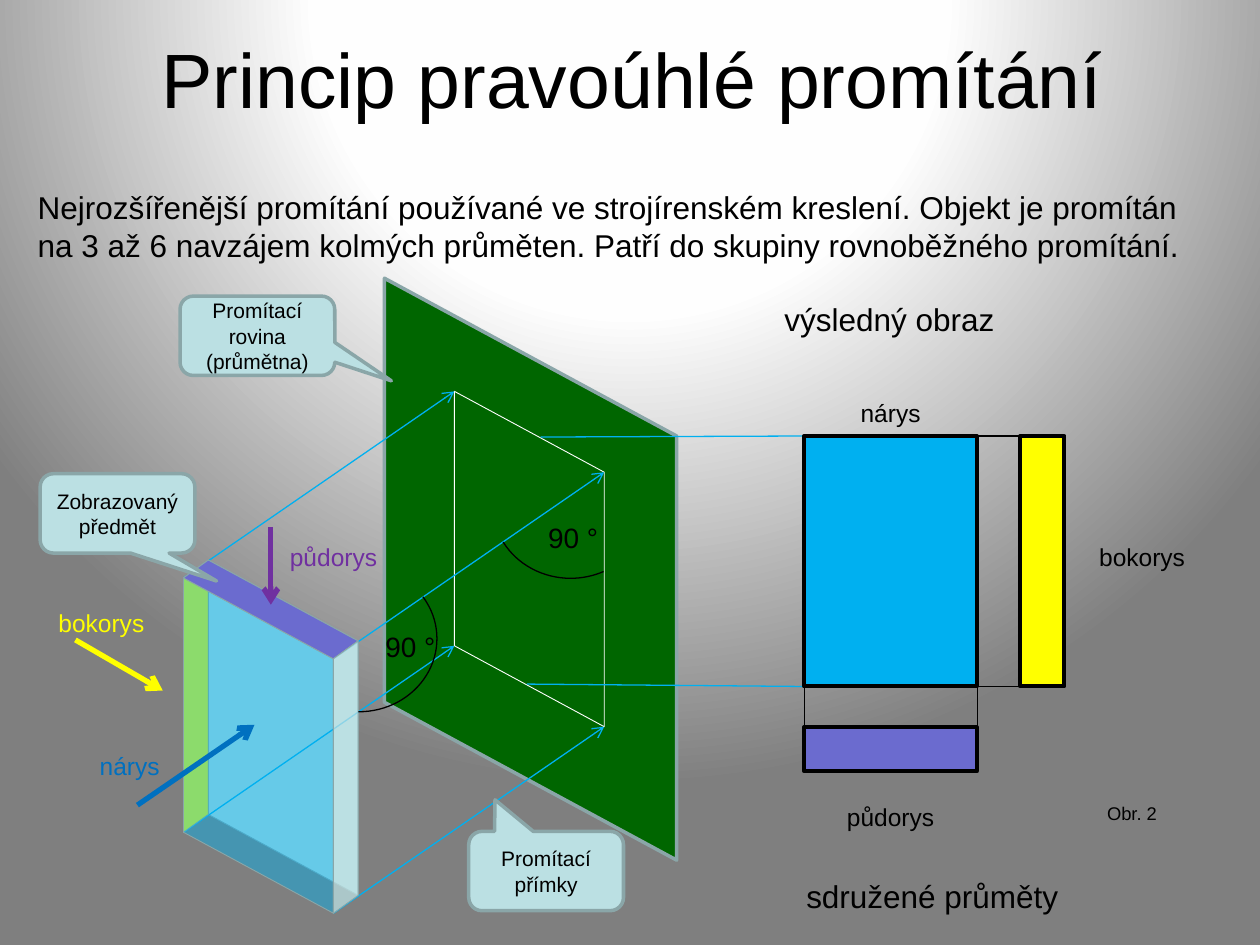
import pptx
import pptx.util
import pptx.dml.color
import pptx.enum.shapes
import pptx.enum.text
import pptx.oxml
import pptx.oxml.ns
from lxml import etree

Cm, Pt = pptx.util.Cm, pptx.util.Pt
qn = pptx.oxml.ns.qn
SHAPES = pptx.enum.shapes.MSO_SHAPE
ALIGN = pptx.enum.text.PP_ALIGN
ANCHOR = pptx.enum.text.MSO_ANCHOR
FIT = pptx.enum.text.MSO_AUTO_SIZE

COLORS = {
    "black": "000000", "white": "FFFFFF", "yellow": "FFFF00", "sky": "00B0F0",
    "blue": "0070C0", "purple": "7030A0", "violet": "6B6BCF", "green": "006600",
    "pale": "BBE0E3", "edge": "8AA6A8",
}
BACKGROUND_STOPS = [(0, "FFFFFF"), (40, "FEFEFE"), (100, "7F7F7F")]

TITLE = ("Princip pravoúhlé promítání", (1.32, -0.03, 22.86, 3.18), 44, "black", "center")
# text, (left, top, width, height), size, colour, alignment
LABELS = [
    ("Nejrozšířenější promítání používané ve strojírenském kreslení. Objekt je promítán "
     "na 3 až 6 navzájem kolmých průměten. Patří do skupiny rovnoběžného promítání.",
     (0.51, 3.66, 23.88, 1.8), 18, "black", "left"),
    ("sdružené průměty", (15.52, 17.55, 6.55, 1.02), 18, "black", "center"),
    ("výsledný obraz", (14.68, 5.92, 6.5, 1.02), 18, "black", "center"),
    ("nárys", (16.23, 7.9, 3.45, 0.86), 14, "black", "center"),
    ("půdorys", (16.23, 16.05, 3.45, 0.86), 14, "black", "center"),
    ("bokorys", (21.82, 10.8, 2.41, 0.86), 14, "black", "center"),
    ("nárys", (0.89, 15.01, 3.45, 0.86), 14, "blue", "center"),
    ("půdorys", (5, 10.8, 3.45, 0.86), 14, "purple", "center"),
    ("bokorys", (0.84, 12.14, 2.41, 0.86), 14, "yellow", "center"),
    ("90 °", (10.8, 10.36, 1.68, 0.94), 16, "black", "left"),
    ("90 °", (7.52, 12.57, 1.68, 0.94), 16, "black", "left"),
    ("Obr. 2", (22.07, 16.05, 1.63, 0.71), 10.5, "black", "left"),
]
# text, left, top, pointer adjustments
CALLOUTS = [
    ("Zobrazovaný předmět", 0.81, 9.55, (0.64, 0.852, 0.167)),
    ("Promítací přímky", 9.45, 16.76, (-0.33, -0.898, 0.167)),
    ("Promítací rovina (průmětna)", 3.63, 5.97, (0.866, 0.568, 0.167)),
]
CALLOUT_SIZE = (3.12, 1.6)
# left, top, start and end angle
ARCS = [(9.93, 8.71, 38.167, 90.782), (5.66, 11.4, 196.179, 54.235)]
ARC_SIZE = (3.15, 2.95)
VIEW_ARROWS = [
    ((2.77, 16.23), (5.13, 14.61), "blue"),
    ((5.46, 10.62), (5.46, 12.19), "purple"),
    ((1.52, 12.9), (3.28, 13.92), "yellow"),
]
IMAGE_LINES = [((10.9, 8.81), (16.28, 8.79)), ((10.62, 13.79), (16.38, 13.84))]

# Object in space: its front face, the way to its back face and to the plane
FACE_LEFT, FACE_TOP, FACE_WIDTH, FACE_HEIGHT = 3.7, 11.65, 3.02, 6.76
SLANT = 0.54
DEPTH = (0.5, -0.36)
RAY = (5.46, -3.76)
PLANE = (7.75, 5.61, 5.89, 11.73)

# Resulting views
VIEW_LEFT, VIEW_TOP, VIEW_WIDTH, VIEW_HEIGHT, VIEW_DEPTH = 16.21, 8.79, 3.48, 5.05, 0.89
SIDE_LEFT, PLAN_TOP = 20.57, 14.66

deck = pptx.Presentation()
deck.slide_width, deck.slide_height = Cm(25.4), Cm(19.05)
page = deck.slides.add_slide(deck.slide_layouts[6])


def rgb(name):
    return pptx.dml.color.RGBColor.from_string(COLORS[name])


def shift(point, step):
    return point[0] + step[0], point[1] + step[1]


def paint(shape, fill, line, width, opacity=100):
    shape.shadow.inherit = False
    if fill:
        shape.fill.solid()
        shape.fill.fore_color.rgb = rgb(fill)
        if opacity < 100:
            color = shape.fill._xPr.find(".//" + qn("a:srgbClr"))
            etree.SubElement(color, qn("a:alpha"), val=str(opacity * 1000))
    else:
        shape.fill.background()
    shape.line.color.rgb = rgb(line)
    shape.line.width = Pt(width)


def add_shape(kind, area, fill, line, width, adjustments=(), opacity=100):
    shape = page.shapes.add_shape(kind, *map(Cm, area))
    for index, value in enumerate(adjustments):
        shape.adjustments[index] = value
    paint(shape, fill, line, width, opacity)
    return shape


def add_slanted(left, top, width, height, fill, line, thickness, opacity=100):
    """An upright parallelogram: a preset one turned by a quarter."""
    turn = (width - height) / 2
    area = (left + turn, top - turn, height, width)
    shape = add_shape(SHAPES.PARALLELOGRAM, area, fill, line, thickness, [SLANT], opacity)
    shape.rotation = 90


def add_face(points, fill, opacity=100):
    corners = [(Cm(x), Cm(y)) for x, y in points]
    builder = page.shapes.build_freeform(*corners[0])
    builder.add_line_segments(corners[1:], close=True)
    paint(builder.convert_to_shape(), fill, "edge", 0.5, opacity)


def add_line(start, end, color, width, arrow=False):
    line = page.shapes.add_connector(
        pptx.enum.shapes.MSO_CONNECTOR.STRAIGHT, *map(Cm, (*start, *end)))
    line.line.color.rgb = rgb(color)
    line.line.width = Pt(width)
    if arrow:
        etree.SubElement(line.line._get_or_add_ln(), qn("a:tailEnd"), type="arrow")
    etree.SubElement(line._element.spPr, qn("a:effectLst"))
    return line


def write(frame, text, size, color, align):
    frame.word_wrap = True
    frame.text = text
    para = frame.paragraphs[0]
    para.alignment = ALIGN.CENTER if align == "center" else ALIGN.LEFT
    for span in para.runs:
        span.font.name = "Arial"
        span.font.size = Pt(size)
        span.font.color.rgb = rgb(color)


def add_label(text, area, size, color, align):
    box = page.shapes.add_textbox(*map(Cm, area))
    write(box.text_frame, text, size, color, align)
    return box


# Background: radial gradient centred above the slide
page.background.fill.solid()
stops = "".join(f'<a:gs pos="{pos * 1000}"><a:srgbClr val="{color}"/></a:gs>'
                for pos, color in BACKGROUND_STOPS)
gradient = pptx.oxml.parse_xml(
    f'<a:gradFill {pptx.oxml.ns.nsdecls("a")} rotWithShape="1"><a:gsLst>{stops}</a:gsLst>'
    '<a:path path="circle"><a:fillToRect l="50000" t="-80000" r="50000" b="180000"/></a:path>'
    '</a:gradFill>')
background = page.element.find(".//" + qn("p:bgPr"))
background.replace(background[0], gradient)

# Title
add_label(*TITLE).text_frame.vertical_anchor = ANCHOR.MIDDLE

# Back face, projection plane and the projected outline
drop = SLANT * FACE_WIDTH
top_left = (FACE_LEFT, FACE_TOP)
top_right = shift(top_left, (FACE_WIDTH, drop))
bottom_left = shift(top_left, (0, FACE_HEIGHT - drop))
bottom_right = shift(top_left, (FACE_WIDTH, FACE_HEIGHT))
face_size = (FACE_WIDTH, FACE_HEIGHT)
add_slanted(*shift(top_left, DEPTH), *face_size, "pale", "edge", 0.5)
add_slanted(*PLANE, "green", "edge", 2)
add_slanted(*shift(top_left, RAY), *face_size, None, "white", 0.5)

# Projection rays from the front corners
for corner in (top_left, bottom_right, top_right, bottom_left):
    add_line(corner, shift(corner, RAY), "sky", 0.75, arrow=True)

# Visible faces of the object
def edge_face(first, second):
    return [first, second, shift(second, DEPTH), shift(first, DEPTH)]


add_face(edge_face(top_left, bottom_left), "yellow")
add_slanted(*top_left, *face_size, "sky", "edge", 0.5, opacity=45)
add_face(edge_face(top_left, top_right), "violet")
add_face(edge_face(top_right, bottom_right), "pale", opacity=75)

# Resulting views and the lines that tie them together
for start, end in IMAGE_LINES:
    add_line(start, end, "sky", 0.75)
front, side, plan = [
    add_shape(SHAPES.RECTANGLE, area, fill, "black", 2.25) for area, fill in (
        ((VIEW_LEFT, VIEW_TOP, VIEW_WIDTH, VIEW_HEIGHT), "sky"),
        ((SIDE_LEFT, VIEW_TOP, VIEW_DEPTH, VIEW_HEIGHT), "yellow"),
        ((VIEW_LEFT, PLAN_TOP, VIEW_WIDTH, VIEW_DEPTH), "violet"))]
for view, site, width in ((plan, 1, 0.25), (plan, 3, 0.25), (side, 0, 0.75), (side, 2, 0.75)):
    tie = add_line((0, 0), (1, 1), "black", width)
    tie.begin_connect(front, site)
    tie.end_connect(view, site)

# Callouts
for text, left, top, pointer in CALLOUTS:
    callout = add_shape(SHAPES.ROUNDED_RECTANGULAR_CALLOUT, (left, top, *CALLOUT_SIZE),
                        "pale", "edge", 2, pointer)
    frame = callout.text_frame
    frame.margin_left = frame.margin_right = Cm(0.2)
    frame.vertical_anchor = ANCHOR.MIDDLE
    write(frame, text, 12, "black", "center")

# Right angles, viewing directions and labels
for left, top, *angles in ARCS:
    add_shape(SHAPES.ARC, (left, top, *ARC_SIZE), None, "black", 0.75, angles)
for start, end, color in VIEW_ARROWS:
    add_line(start, end, color, 3, arrow=True)
for label in LABELS:
    add_label(*label).text_frame.auto_size = FIT.SHAPE_TO_FIT_TEXT

deck.save("out.pptx")
